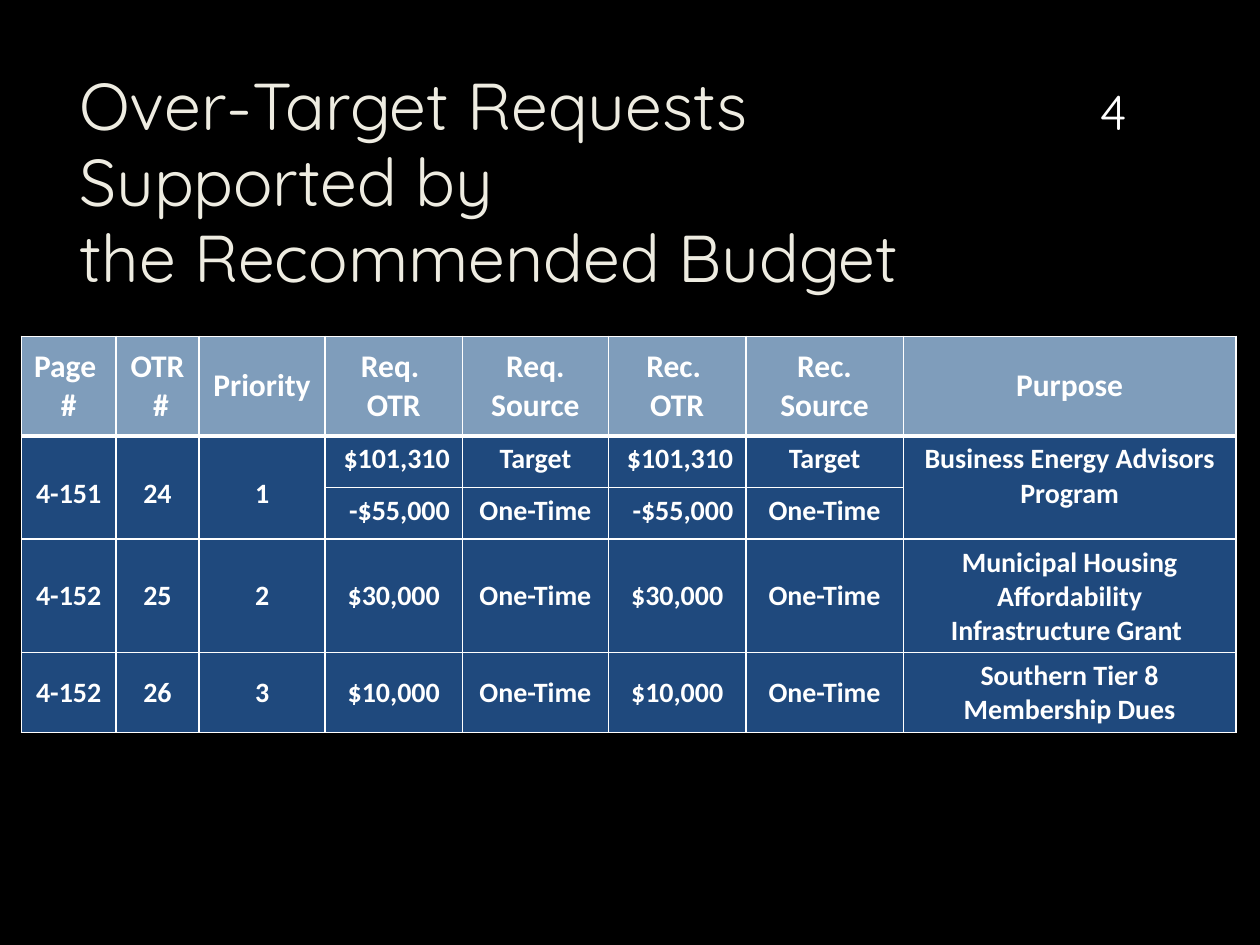
from dataclasses import dataclass

from lxml.etree import SubElement
from pptx import Presentation
from pptx.dml.color import RGBColor
from pptx.enum.text import MSO_ANCHOR, PP_ALIGN
from pptx.oxml.ns import qn
from pptx.util import Inches, Pt


@dataclass(frozen=True)
class Theme:
    background: str = "000000"
    title: str = "EEECE1"
    light: str = "FFFFFF"
    header_fill: str = "7F9DBB"
    body_fill: str = "1F497D"
    display_font: str = "Quicksand"
    table_font: str = "Calibri"
    title_size: float = 37.8
    number_size: float = 28
    header_size: float = 18
    body_size: float = 16
    rule: float = 1
    header_rule: float = 3


THEME = Theme()

COLUMN_WIDTHS = [0.75, 0.66, 1, 1.09, 1.16, 1.09, 1.25, 2.64]
ROW_HEIGHTS = [0.79] + [0.41] * 4
AMOUNT_COLUMNS = (3, 5)
MERGED_COLUMNS = (0, 1, 2, 7)  # shared by the two lines of the first request
SPLIT_ROWS = (1, 2)

REQUESTS = [
    ["Page \n#", "OTR\n #", "Priority", "Req. \nOTR", "Req. Source",
     "Rec. \nOTR", "Rec. Source", "Purpose"],
    ["4-151", "24", "1", "$101,310", "Target", "$101,310", "Target",
     "Business Energy Advisors Program"],
    [None, None, None, "-$55,000", "One-Time", "-$55,000", "One-Time", None],
    ["4-152", "25", "2", "$30,000", "One-Time", "$30,000", "One-Time",
     "Municipal Housing Affordability Infrastructure Grant "],
    ["4-152", "26", "3", "$10,000", "One-Time", "$10,000", "One-Time",
     "Southern Tier 8 Membership Dues"],
]


def style_text(frame, font, size, color, align, bold=False):
    for paragraph in frame.paragraphs:
        paragraph.alignment = align
        for run in paragraph.runs:
            run.font.name = font
            run.font.size = Pt(size)
            run.font.bold = bold
            run.font.color.rgb = RGBColor.from_string(color)


def add_label(slide, text, box, size, color, align, anchor):
    frame = slide.shapes.add_textbox(*map(Inches, box)).text_frame
    frame.word_wrap = True
    frame.vertical_anchor = anchor
    frame.text = text
    style_text(frame, THEME.display_font, size, color, align)
    return frame


def set_borders(cell, top, bottom):
    properties = cell._tc.get_or_add_tcPr()
    widths = {"L": THEME.rule, "R": THEME.rule, "T": top, "B": bottom}
    for side, width in widths.items():
        line = SubElement(properties, qn(f"a:ln{side}"), w=str(Pt(width)))
        fill = SubElement(line, qn("a:solidFill"))
        SubElement(fill, qn("a:srgbClr"), val=THEME.light)


def format_cell(cell, row, column):
    is_header = row == 0
    is_split = row in SPLIT_ROWS
    set_borders(cell,
                top=THEME.header_rule if row == 1 else THEME.rule,
                bottom=THEME.header_rule if is_header else THEME.rule)
    cell.fill.solid()
    cell.fill.fore_color.rgb = RGBColor.from_string(
        THEME.header_fill if is_header else THEME.body_fill)
    cell.vertical_anchor = MSO_ANCHOR.TOP if is_split else MSO_ANCHOR.MIDDLE
    right = is_split and column in AMOUNT_COLUMNS
    style_text(cell.text_frame, THEME.table_font,
               THEME.header_size if is_header else THEME.body_size,
               THEME.light, PP_ALIGN.RIGHT if right else PP_ALIGN.CENTER,
               bold=True)
    # Double spacing centres the short merged values
    if row == 1 and column in MERGED_COLUMNS[:3]:
        cell.text_frame.paragraphs[0].line_spacing = 2.0


def add_request_table(slide):
    table = slide.shapes.add_table(
        len(ROW_HEIGHTS), len(COLUMN_WIDTHS), Inches(0.17), Inches(2.67),
        Inches(sum(COLUMN_WIDTHS)), Inches(sum(ROW_HEIGHTS))).table
    table.horz_banding = False
    for column, width in zip(table.columns, COLUMN_WIDTHS):
        column.width = Inches(width)
    for row, height in zip(table.rows, ROW_HEIGHTS):
        row.height = Inches(height)

    for r, values in enumerate(REQUESTS):
        for c, value in enumerate(values):
            cell = table.cell(r, c)
            if value is not None:
                cell.text = value
            format_cell(cell, r, c)

    first, last = SPLIT_ROWS
    for c in MERGED_COLUMNS:
        table.cell(first, c).merge(table.cell(last, c))


def main():
    deck = Presentation()
    deck.slide_width, deck.slide_height = Inches(10), Inches(7.5)
    slide = deck.slides.add_slide(deck.slide_layouts[6])
    slide.background.fill.solid()
    slide.background.fill.fore_color.rgb = RGBColor.from_string(THEME.background)

    # Heading and page number
    heading = add_label(
        slide, "Over-Target Requests Supported by \vthe Recommended Budget",
        (0.53, 0.5, 7.72, 1.53), THEME.title_size, THEME.title,
        PP_ALIGN.LEFT, MSO_ANCHOR.TOP)
    heading.paragraphs[0].line_spacing = 0.96
    add_label(slide, "4", (8.49, 0.32, 0.69, 0.84), THEME.number_size,
              THEME.light, PP_ALIGN.CENTER, MSO_ANCHOR.BOTTOM)

    # Requests with their recommended funding
    add_request_table(slide)
    deck.save("out.pptx")


if __name__ == "__main__":
    main()
